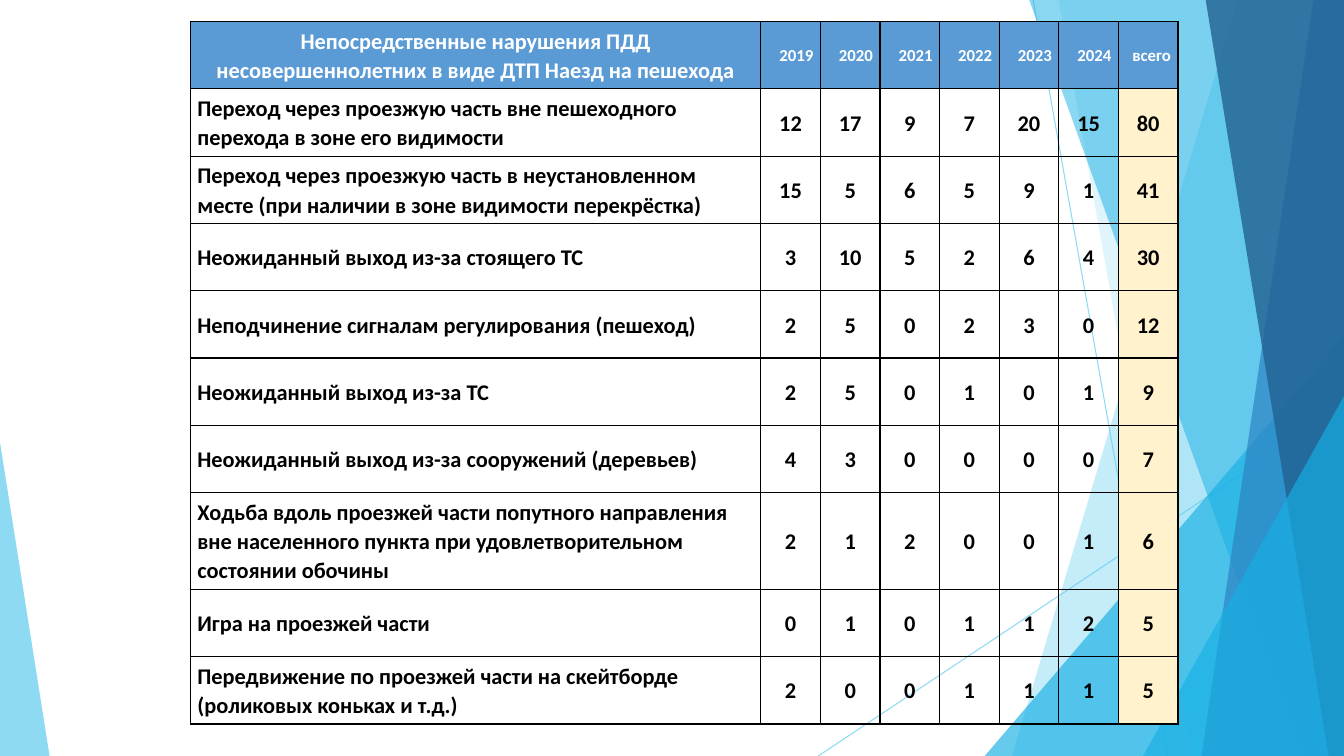
from lxml import etree
from pptx import Presentation
from pptx.dml.color import RGBColor
from pptx.enum.shapes import MSO_CONNECTOR, MSO_SHAPE
from pptx.enum.text import MSO_ANCHOR, PP_ALIGN
from pptx.oxml.ns import qn
from pptx.util import Pt

LINE = MSO_CONNECTOR.STRAIGHT
TRIANGLE = MSO_SHAPE.ISOSCELES_TRIANGLE
MIDDLE = MSO_ANCHOR.MIDDLE
LEFT, CENTER, RIGHT = PP_ALIGN.LEFT, PP_ALIGN.CENTER, PP_ALIGN.RIGHT

SKY = RGBColor(0x5F, 0xCB, 0xEF)
CYAN = RGBColor(0x17, 0xB0, 0xE4)
BLUE = RGBColor(0x2E, 0x83, 0xC3)
NAVY = RGBColor(0x22, 0x62, 0x92)
HEAD = RGBColor(0x5B, 0x9B, 0xD5)
CREAM = RGBColor(0xFF, 0xF2, 0xCC)
WHITE = RGBColor(0xFF, 0xFF, 0xFF)
BLACK = RGBColor(0, 0, 0)

WIDE, HIGH = 960, 540
TOP = -0.6  # the facets start just above the slide


def fade(shape, alpha):
    for color in shape._element.spPr.iter(qn("a:srgbClr")):
        etree.SubElement(color, qn("a:alpha"), val=str(alpha * 1000))


def paint(shape, color, alpha):
    shape.shadow.inherit = False
    shape.fill.solid()
    shape.fill.fore_color.rgb = color
    shape.line.fill.background()
    fade(shape, alpha)


deck = Presentation()
deck.slide_width, deck.slide_height = Pt(WIDE), Pt(HIGH)
slide = deck.slides.add_slide(deck.slide_layouts[6])
shapes = slide.shapes

# Thin lines behind the facets
for ends in [(738, 0, 834, HIGH), (WIDE, 290, 584.5, HIGH)]:
    line = shapes.add_connector(LINE, *[Pt(v) for v in ends])
    line.line.color.rgb = SKY
    line.line.width = Pt(0.75)
    fade(line, 70)
    etree.SubElement(line._element.spPr, qn("a:effectLst"))

# Facets: a slanted left edge (top x, bottom x), or a triangle (box, apex)
facets = [
    ((884.2, 722.9), None, SKY, 36),
    ((756, 851.8), None, SKY, 20),
    ((703.4, 240, 256.6, 300), 1, CYAN, 66),
    ((735, 929.5), None, CYAN, 50),
    ((938.2, 858.2), None, BLUE, 70),
    ((861.1, 949), None, NAVY, 80),
    ((816.5, 283, 143.5, 257), 1, CYAN, 66),
    ((0, 316, 35.4, 224), 0, SKY, 70),
]
for spot, apex, color, alpha in facets:
    if apex is None:
        high, low = spot
        form = shapes.build_freeform(Pt(high), Pt(TOP))
        corners = [(WIDE, TOP), (WIDE, HIGH), (low, HIGH)]
        form.add_line_segments([(Pt(x), Pt(y)) for x, y in corners])
        facet = form.convert_to_shape()
    else:
        facet = shapes.add_shape(TRIANGLE, *[Pt(v) for v in spot])
        facet.adjustments[0] = apex
    paint(facet, color, alpha)

# Table data
rows = [
    ("Непосредственные нарушения ПДД несовершеннолетних в виде ДТП Наезд на пешехода",
     2019, 2020, 2021, 2022, 2023, 2024, "всего"),
    ("Переход через проезжую часть вне пешеходного перехода в зоне его видимости",
     12, 17, 9, 7, 20, 15, 80),
    ("Переход через проезжую часть в неустановленном месте "
     "(при наличии в зоне видимости перекрёстка)",
     15, 5, 6, 5, 9, 1, 41),
    ("Неожиданный выход из-за стоящего ТС", 3, 10, 5, 2, 6, 4, 30),
    ("Неподчинение сигналам регулирования (пешеход)", 2, 5, 0, 2, 3, 0, 12),
    ("Неожиданный выход из-за ТС", 2, 5, 0, 1, 0, 1, 9),
    ("Неожиданный выход из-за сооружений (деревьев)", 4, 3, 0, 0, 0, 0, 7),
    ("Ходьба вдоль проезжей части попутного направления вне населенного пункта "
     "при удовлетворительном состоянии обочины",
     2, 1, 2, 0, 0, 1, 6),
    ("Игра на проезжей части", 0, 1, 0, 1, 1, 2, 5),
    ("Передвижение по проезжей части на скейтборде (роликовых коньках и т.д.)",
     2, 0, 0, 1, 1, 1, 5),
]
widths = [407.4] + [42.6] * 7
heights = [48.1] * 10
heights[7] = 69.1  # three lines of text

# Table grid
frame = shapes.add_table(len(rows), len(widths), Pt(136), Pt(15.4),
                         Pt(sum(widths)), Pt(sum(heights)))
table = frame.table
table.first_row = table.horz_banding = False
for col, width in zip(table.columns, widths):
    col.width = Pt(width)
for row, height in zip(table.rows, heights):
    row.height = Pt(height)

# Cells
inset = {"margin_left": Pt(5), "margin_right": Pt(5), "margin_top": 0,
         "margin_bottom": 0, "vertical_anchor": MIDDLE}
for r, row in enumerate(rows):
    for c, value in enumerate(row):
        cell = table.cell(r, c)
        for key, val in inset.items():
            setattr(cell, key, val)

        # Borders come before the fill in the cell's XML
        props = cell._tc.get_or_add_tcPr()
        for side in ("lnL", "lnR", "lnT", "lnB"):
            edge = etree.SubElement(props, qn("a:" + side), w=str(Pt(1)))
            ink = etree.SubElement(edge, qn("a:solidFill"))
            etree.SubElement(ink, qn("a:srgbClr"), val=str(BLACK))

        if r == 0 or c == 7:
            cell.fill.solid()
            cell.fill.fore_color.rgb = HEAD if r == 0 else CREAM
        else:
            cell.fill.background()

        para = cell.text_frame.paragraphs[0]
        para.line_spacing = 1.07
        if r == 0:
            para.alignment = RIGHT if c else CENTER
        else:
            para.alignment = CENTER if c else LEFT
        run = para.add_run()
        run.text = str(value)
        look = {"name": "Calibri", "bold": True,
                "size": Pt(12 if r == 0 and c else 16)}
        for key, val in look.items():
            setattr(run.font, key, val)
        run.font.color.rgb = BLACK if r else WHITE

deck.save("out.pptx")
